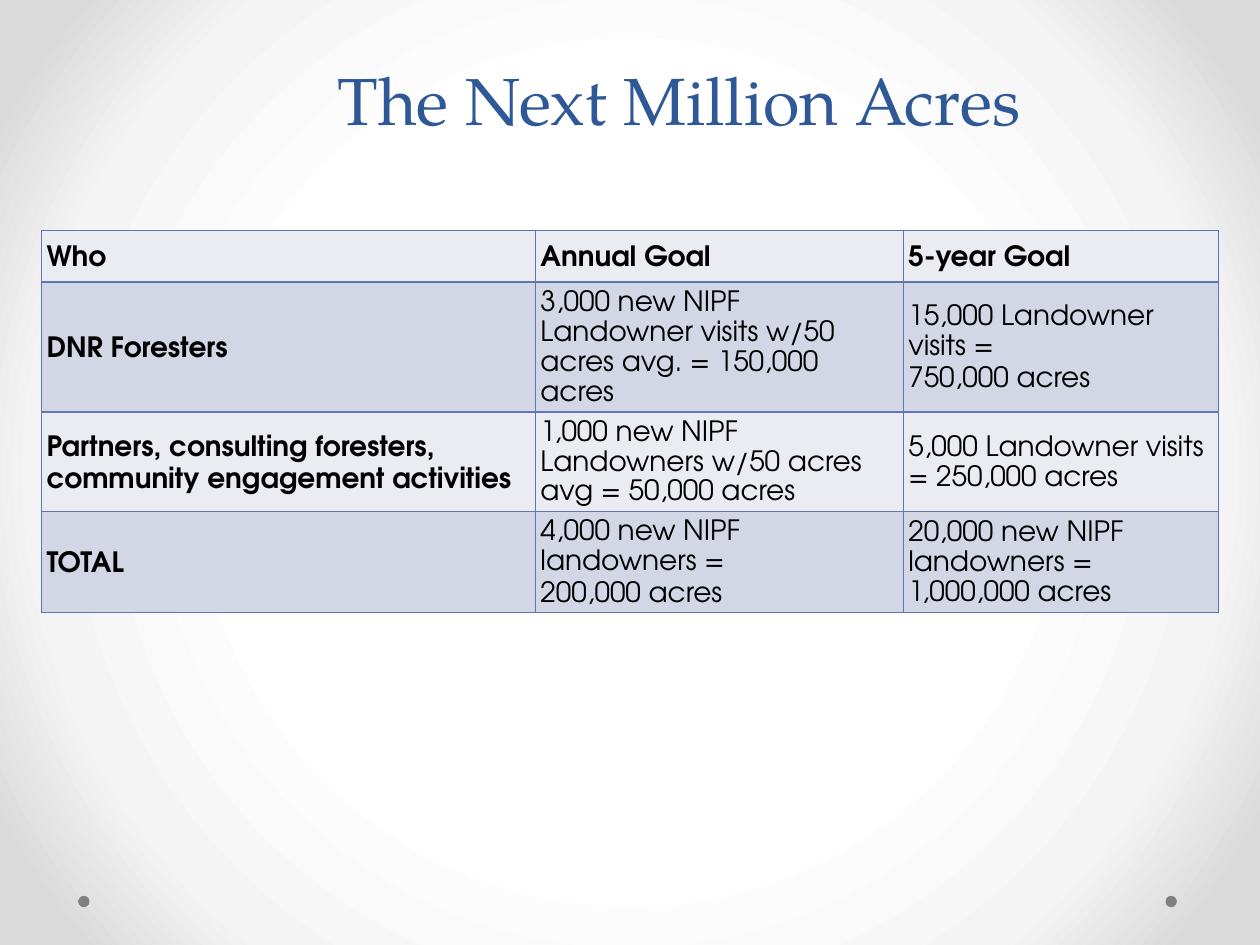
from lxml import etree
from pptx import Presentation
from pptx.dml.color import RGBColor
from pptx.enum.shapes import MSO_SHAPE
from pptx.enum.text import MSO_ANCHOR, PP_ALIGN
from pptx.oxml import parse_xml
from pptx.oxml.ns import nsdecls, qn
from pptx.util import Inches, Pt

OVAL = MSO_SHAPE.OVAL
MIDDLE, BOTTOM = MSO_ANCHOR.MIDDLE, MSO_ANCHOR.BOTTOM
LEFT = PP_ALIGN.LEFT

TITLE_FONT, BODY_FONT = "TeX Gyre Pagella", "TeX Gyre Adventor"
TITLE_BLUE, BORDER_BLUE = "2F5897", "6076B4"
BAND_FILLS = ["EAECF2", "D2D6E5"]
BLACK, DOT_GRAY = "000000", "808080"
BACKGROUND_STOPS = [(50, "FFFFFF"), (76, "F4F4F4"), (92, "DADADA")]

COLUMN_WIDTHS = [3.92, 2.92, 2.5]
ROW_HEIGHTS = [0.41, 1.03, 0.79, 0.8]
HEADER_SPACING, LABEL_SPACING, BODY_SPACING = 1.18, Pt(18.2), Pt(17)
# Each cell is a list of paragraphs; a newline is a line break
GOALS = [
    [["Who"], ["Annual Goal"], ["5-year Goal"]],
    [["DNR Foresters"],
     ["3,000 new NIPF Landowner visits w/50 acres avg. = 150,000 acres"],
     ["15,000 Landowner visits =", "750,000 acres"]],
    [["Partners, consulting foresters, \ncommunity engagement activities"],
     ["1,000 new NIPF Landowners w/50 acres avg = 50,000 acres"],
     ["5,000 Landowner visits = 250,000 acres"]],
    [["TOTAL"],
     ["4,000 new NIPF landowners =", "200,000 acres "],
     ["20,000 new NIPF landowners = 1,000,000 acres"]],
]


def color(hex_string):
    return RGBColor.from_string(hex_string)


def add_run(paragraph, text, font_name, size, hex_color, bold=False):
    run = paragraph.add_run()
    run.text = text
    run.font.name = font_name
    run.font.size = Pt(size)
    run.font.bold = bold
    run.font.color.rgb = color(hex_color)


def set_background(slide):
    """Fill the slide with a gradient that darkens towards the corners."""
    stops = "".join(
        f'<a:gs pos="{percent * 1000}"><a:srgbClr val="{value}"/></a:gs>'
        for percent, value in BACKGROUND_STOPS)
    gradient = parse_xml(
        f'<a:gradFill {nsdecls("a")} rotWithShape="1"><a:gsLst>{stops}</a:gsLst>'
        '<a:path path="circle"><a:fillToRect l="50000" t="50000" r="50000" b="50000"/>'
        '</a:path></a:gradFill>')
    slide.background.fill.solid()
    properties = slide.background._cSld.bg.bgPr
    properties.replace(properties.find(qn("a:solidFill")), gradient)


def add_footer_dots(slide, left, top, width, size):
    """Place one dot at each end of the footer strip."""
    for dot_left in (left, left + width - size):
        dot = slide.shapes.add_shape(
            OVAL, Inches(dot_left), Inches(top), Inches(size), Inches(size))
        dot.shadow.inherit = False
        dot.fill.solid()
        dot.fill.fore_color.rgb = color(DOT_GRAY)
        dot.line.fill.background()


def add_title(slide, left, top, width, height):
    box = slide.shapes.add_textbox(
        Inches(left), Inches(top), Inches(width), Inches(height))
    frame = box.text_frame
    frame.word_wrap = True
    frame.vertical_anchor = BOTTOM
    paragraph = frame.paragraphs[0]
    paragraph.alignment = LEFT
    paragraph.line_spacing = Pt(58)
    add_run(paragraph, "The Next Million Acres", TITLE_FONT, 38, TITLE_BLUE)


def add_borders(cell):
    properties = cell._tc.get_or_add_tcPr()
    for position, side in enumerate(("lnL", "lnR", "lnT", "lnB")):
        line = etree.Element(qn(f"a:{side}"), w=str(Pt(1)))
        fill = etree.SubElement(line, qn("a:solidFill"))
        etree.SubElement(fill, qn("a:srgbClr"), val=BORDER_BLUE)
        properties.insert(position, line)


def fill_cell(cell, paragraphs, is_header, is_label, fill):
    cell.fill.solid()
    cell.fill.fore_color.rgb = color(fill)
    cell.vertical_anchor = MIDDLE
    cell.margin_left = cell.margin_right = Inches(0.04)
    cell.margin_top = cell.margin_bottom = Inches(0.04)
    add_borders(cell)
    frame = cell.text_frame
    for index, text in enumerate(paragraphs):
        paragraph = frame.add_paragraph() if index else frame.paragraphs[0]
        paragraph.line_spacing = (HEADER_SPACING if is_header
                                  else LABEL_SPACING if is_label else BODY_SPACING)
        paragraph.space_after = Pt(6 if is_header else 1)
        for line_index, line in enumerate(text.split("\n")):
            if line_index:
                paragraph.add_line_break()
            add_run(paragraph, line, BODY_FONT, 16, BLACK, is_header or is_label)


def add_goal_table(slide, left, top):
    table = slide.shapes.add_table(
        len(GOALS), len(COLUMN_WIDTHS), Inches(left), Inches(top),
        Inches(sum(COLUMN_WIDTHS)), Inches(sum(ROW_HEIGHTS))).table
    table.horz_banding = False
    for column, width in zip(table.columns, COLUMN_WIDTHS):
        column.width = Inches(width)
    for row_index, row in enumerate(GOALS):
        table.rows[row_index].height = Inches(ROW_HEIGHTS[row_index])
        for column_index, paragraphs in enumerate(row):
            fill_cell(table.cell(row_index, column_index), paragraphs,
                      row_index == 0, column_index == 0, BAND_FILLS[row_index % 2])


def main():
    presentation = Presentation()
    presentation.slide_width = Inches(10)
    presentation.slide_height = Inches(7.5)
    slide = presentation.slides.add_slide(presentation.slide_layouts[6])
    set_background(slide)
    add_footer_dots(slide, 0.62, 7.11, 8.72, 0.09)
    add_title(slide, 2.58, -0.02, 7.2, 1.17)
    add_goal_table(slide, 0.33, 1.83)
    presentation.save("out.pptx")


if __name__ == "__main__":
    main()
